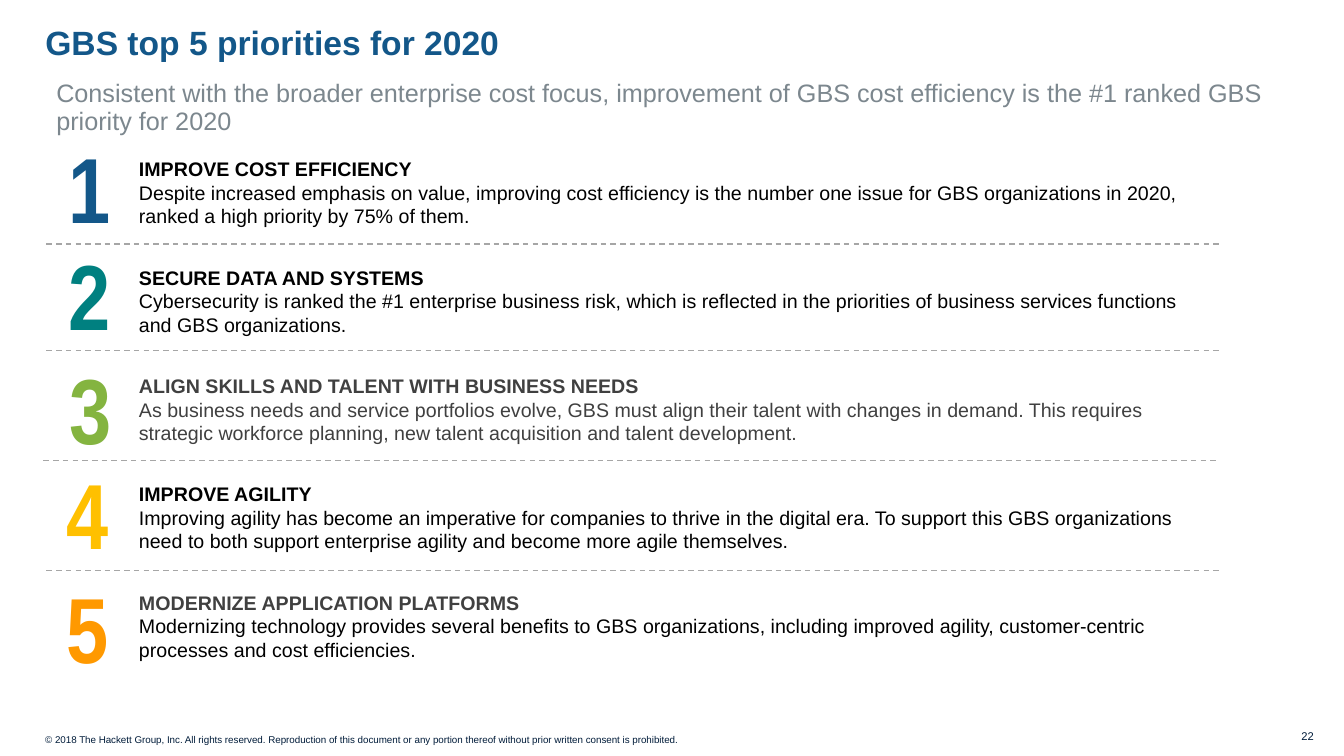
from dataclasses import dataclass
from typing import Optional

from pptx import Presentation
from pptx.dml.color import RGBColor
from pptx.enum.dml import MSO_LINE
from pptx.enum.shapes import MSO_CONNECTOR
from pptx.enum.text import MSO_ANCHOR, MSO_AUTO_SIZE, PP_ALIGN
from pptx.oxml.ns import qn
from pptx.util import Inches, Pt

DASH = MSO_LINE.DASH
STRAIGHT = MSO_CONNECTOR.STRAIGHT
TOP, MIDDLE = MSO_ANCHOR.TOP, MSO_ANCHOR.MIDDLE
NO_AUTOFIT = MSO_AUTO_SIZE.NONE
LEFT, RIGHT = PP_ALIGN.LEFT, PP_ALIGN.RIGHT
TITLE_ONLY = 5


@dataclass(frozen=True)
class TextStyle:
    size: float
    color: str
    bold: bool = False
    font: str = "Arial"
    align: PP_ALIGN = LEFT
    line_spacing: Optional[float] = None


@dataclass(frozen=True)
class Theme:
    navy: str = "135789"
    teal: str = "008080"
    green: str = "84B440"
    yellow: str = "FFC000"
    orange: str = "FF9900"
    black: str = "000000"
    charcoal: str = "404040"
    subtitle_gray: str = "7C878E"
    rule_gray: str = "A6A6A6"
    footer_navy: str = "001C3A"
    title_size: float = 24
    subtitle_size: float = 18
    number_size: float = 66
    body_size: float = 14
    page_size: float = 8
    copyright_size: float = 7
    number_font: str = "Arial Narrow"


THEME = Theme()


@dataclass(frozen=True)
class Box:
    left: float
    top: float
    width: float
    height: float

    def lengths(self):
        return [Inches(v) for v in (self.left, self.top, self.width, self.height)]


@dataclass(frozen=True)
class Priority:
    heading: str
    detail: str
    number_color: str
    number_left: float
    number_top: float
    text_width: float = 10.83
    heading_color: str = THEME.black
    detail_color: str = THEME.black


@dataclass(frozen=True)
class Divider:
    top: float
    left: float = 0.46


PRIORITIES = [
    Priority("IMPROVE COST EFFICIENCY",
             "Despite increased emphasis on value, improving cost efficiency is the number one "
             "issue for GBS organizations in 2020, ranked a high priority by 75% of them.",
             THEME.navy, 0.37, 1.38),
    Priority("SECURE DATA AND SYSTEMS",
             "Cybersecurity is ranked the #1 enterprise business risk, which is reflected in the "
             "priorities of business services functions and GBS organizations.",
             THEME.teal, 0.37, 2.44, text_width=10.7),
    Priority("ALIGN SKILLS AND TALENT WITH BUSINESS NEEDS",
             "As business needs and service portfolios evolve, GBS must align their talent with "
             "changes in demand. This requires strategic workforce planning, new talent "
             "acquisition and talent development.",
             THEME.green, 0.38, 3.57,
             heading_color=THEME.charcoal, detail_color=THEME.charcoal),
    Priority("IMPROVE AGILITY",
             "Improving agility has become an imperative for companies to thrive in the digital "
             "era. To support this GBS organizations need to both support enterprise agility and "
             "become more agile themselves.",
             THEME.yellow, 0.35, 4.62),
    Priority("MODERNIZE APPLICATION PLATFORMS",
             "Modernizing technology provides several benefits to GBS organizations, including "
             "improved agility, customer-centric processes and cost efficiencies.",
             THEME.orange, 0.35, 5.75, text_width=10.95, heading_color=THEME.charcoal),
]
DIVIDERS = [Divider(2.42), Divider(3.48), Divider(4.57, left=0.43), Divider(5.66)]
DIVIDER_WIDTH = 11.65
ROW_LEFT, ROW_TOP, ROW_HEIGHT = 1.28, 1.44, 0.94
ROW_PITCH = 4.3 / (len(PRIORITIES) - 1)
NUMBER_WIDTH = 0.83


def write_paragraph(paragraph, text: str, style: TextStyle) -> None:
    paragraph.alignment = style.align
    if style.line_spacing is not None:
        paragraph.line_spacing = style.line_spacing
    run = paragraph.add_run()
    run.text = text
    font_format = {"name": style.font, "size": Pt(style.size), "bold": style.bold}
    for name, value in font_format.items():
        setattr(run.font, name, value)
    run.font.color.rgb = RGBColor.from_string(style.color)


def add_text(slide, box: Box, lines: list[tuple[str, TextStyle]],
             anchor: MSO_ANCHOR = TOP) -> None:
    """Add a wrapping text box with one paragraph per styled line."""
    frame = slide.shapes.add_textbox(*box.lengths()).text_frame
    frame.word_wrap = True
    frame.vertical_anchor = anchor
    for index, (text, style) in enumerate(lines):
        paragraph = frame.add_paragraph() if index else frame.paragraphs[0]
        write_paragraph(paragraph, text, style)


def add_title(slide, text: str) -> None:
    title = slide.shapes.title
    title.left, title.top, title.width, title.height = Box(0.45, 0.26, 12.43, 0.45).lengths()
    frame_format = {"margin_left": 0, "margin_top": 0, "margin_right": 0, "margin_bottom": 0,
                    "vertical_anchor": TOP, "word_wrap": True, "auto_size": NO_AUTOFIT}
    for name, value in frame_format.items():
        setattr(title.text_frame, name, value)
    style = TextStyle(THEME.title_size, THEME.navy, bold=True, line_spacing=0.9)
    write_paragraph(title.text_frame.paragraphs[0], text, style)


def add_priority(slide, index: int, priority: Priority) -> None:
    row = Box(ROW_LEFT, ROW_TOP + index * ROW_PITCH, priority.text_width, ROW_HEIGHT)
    heading = TextStyle(THEME.body_size, priority.heading_color, bold=True)
    detail = TextStyle(THEME.body_size, priority.detail_color)
    add_text(slide, row, [(priority.heading, heading), (priority.detail, detail)], MIDDLE)

    number_box = Box(priority.number_left, priority.number_top, NUMBER_WIDTH, ROW_HEIGHT)
    number = TextStyle(THEME.number_size, priority.number_color, bold=True,
                       font=THEME.number_font, align=RIGHT)
    add_text(slide, number_box, [(str(index + 1), number)], MIDDLE)


def add_divider(slide, divider: Divider) -> None:
    top = Inches(divider.top)
    connector = slide.shapes.add_connector(
        STRAIGHT, Inches(divider.left), top, Inches(divider.left + DIVIDER_WIDTH), top)
    connector.line.color.rgb = RGBColor.from_string(THEME.rule_gray)
    connector.line.width = Pt(1)
    connector.line.dash_style = DASH
    properties = connector._element.spPr
    properties.append(properties.makeelement(qn("a:effectLst"), {}))


def main() -> None:
    presentation = Presentation()
    presentation.slide_width, presentation.slide_height = Inches(13.33), Inches(7.5)
    slide = presentation.slides.add_slide(presentation.slide_layouts[TITLE_ONLY])

    add_title(slide, "GBS top 5 priorities for 2020")
    subtitle = TextStyle(THEME.subtitle_size, THEME.subtitle_gray, line_spacing=Pt(20))
    add_text(slide, Box(0.46, 0.74, 12.42, 0.46), [(
        "Consistent with the broader enterprise cost focus, improvement of GBS cost "
        "efficiency is the #1 ranked GBS priority for 2020", subtitle)])

    for index, priority in enumerate(PRIORITIES):
        add_priority(slide, index, priority)
    for divider in DIVIDERS:
        add_divider(slide, divider)

    page = TextStyle(THEME.page_size, THEME.footer_navy, align=RIGHT)
    add_text(slide, Box(8.59, 7.19, 4.54, 0.24), [("22", page)])
    copyright_style = TextStyle(THEME.copyright_size, THEME.footer_navy)
    add_text(slide, Box(0.35, 7.23, 10.03, 0.22), [(
        "© 2018 The Hackett Group, Inc. All rights reserved. Reproduction of this document "
        "or any portion thereof without prior written consent is prohibited.",
        copyright_style)])

    presentation.save("out.pptx")


if __name__ == "__main__":
    main()
